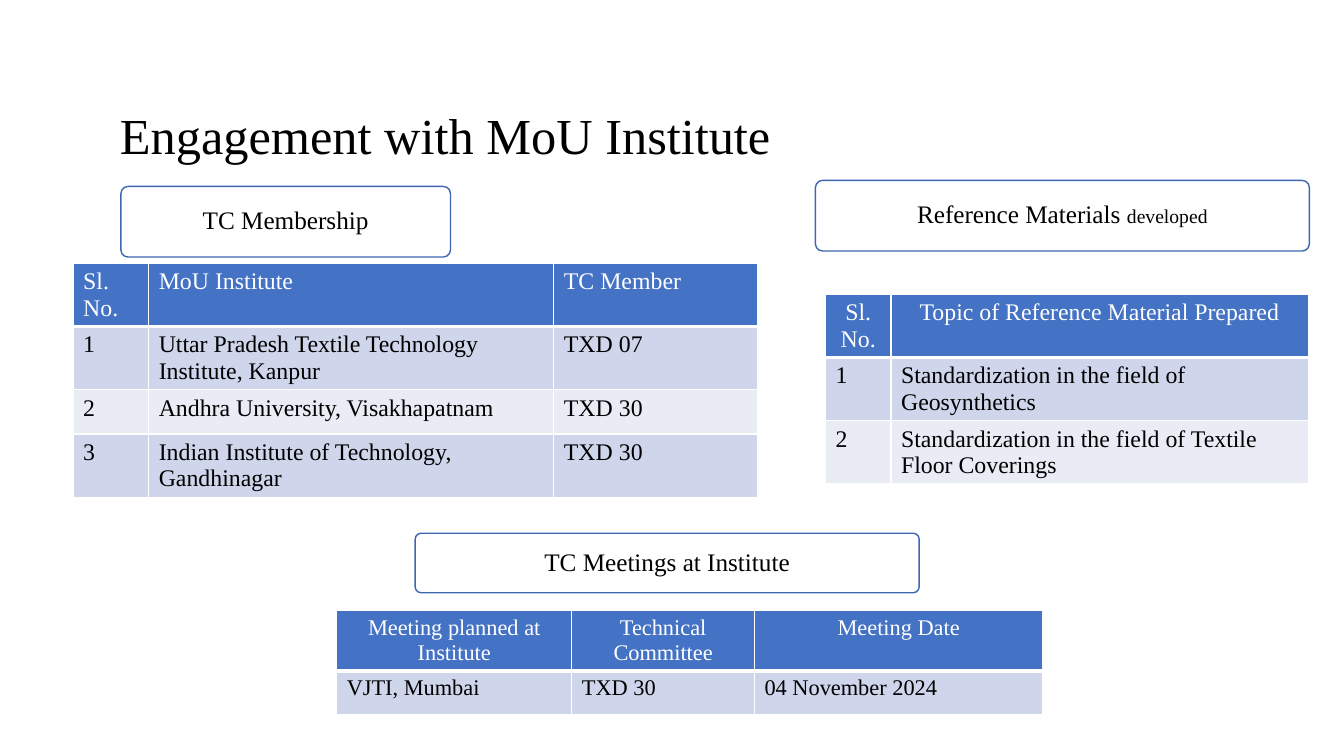
from lxml import etree
from pptx import Presentation
from pptx import util as u
from pptx.dml.color import RGBColor
from pptx.enum import shapes, text
from pptx.oxml.ns import qn

COLORS = {
    "black": "000000",
    "white": "FFFFFF",
    "outline": "3E67B2",
    "header": "4472C4",
    "odd": "CFD5EA",
    "even": "E9EBF5",
}
CENTER, LEFT = text.PP_ALIGN.CENTER, text.PP_ALIGN.LEFT


def rgb(name):
    return RGBColor.from_string(COLORS[name])


def add_text(p, content, size=18, color="black", align=LEFT, font="Times New Roman", spacing=None):
    p.alignment = align
    if spacing:
        p.line_spacing = spacing
    r = p.add_run()
    r.text = content
    r.font.name = font
    r.font.size = u.Pt(size)
    r.font.bold = False
    r.font.color.rgb = rgb(color)


class SlideBuilder:
    def __init__(self, s):
        self.s = s

    def title(self, content, x, y, w, h):
        sp = self.s.shapes.title
        sp.left, sp.top, sp.width, sp.height = map(u.Pt, (x, y, w, h))
        tf = sp.text_frame
        tf.auto_size = text.MSO_AUTO_SIZE.NONE
        tf.vertical_anchor = text.MSO_ANCHOR.MIDDLE
        add_text(tf.paragraphs[0], content, size=36, spacing=0.9)

    def heading(self, parts, x, y, w, h):
        sp = self.s.shapes.add_shape(
            shapes.MSO_SHAPE.ROUNDED_RECTANGLE, *map(u.Pt, (x, y, w, h)))
        sp.adjustments[0] = 0.1
        sp.shadow.inherit = False
        sp.fill.solid()
        sp.fill.fore_color.rgb = rgb("white")
        sp.line.color.rgb = rgb("outline")
        sp.line.width = u.Pt(1)
        tf = sp.text_frame
        tf.word_wrap = True
        tf.vertical_anchor = text.MSO_ANCHOR.MIDDLE
        for content, size in parts:
            add_text(tf.paragraphs[0], content, size=size, align=CENTER, spacing=0.9)

    def borders(self, cell, bottom):
        tcPr = cell._tc.get_or_add_tcPr()
        for side, width in (("L", 1), ("R", 1), ("T", 1), ("B", bottom)):
            ln = etree.SubElement(tcPr, qn(f"a:ln{side}"), w=str(u.Pt(width)))
            fill = etree.SubElement(ln, qn("a:solidFill"))
            etree.SubElement(fill, qn("a:srgbClr"), val=COLORS["white"])

    def table(self, rows, x, y, widths, heights, size=17, header_align=LEFT):
        tbl = self.s.shapes.add_table(
            len(rows), len(widths),
            *map(u.Pt, (x, y, sum(widths), sum(heights)))).table
        for col, width in zip(tbl.columns, widths):
            col.width = u.Pt(width)
        for i, (row, height) in enumerate(zip(rows, heights)):
            tbl.rows[i].height = u.Pt(height)
            is_header = i == 0
            fill = "header" if is_header else ("odd" if i % 2 else "even")
            for j, content in enumerate(row):
                cell = tbl.cell(i, j)
                self.borders(cell, bottom=3 if is_header else 1)
                cell.fill.solid()
                cell.fill.fore_color.rgb = rgb(fill)
                add_text(cell.text_frame.paragraphs[0], content, size=size,
                         color="white" if is_header else "black",
                         align=header_align if is_header else LEFT)


def main():
    prs = Presentation()
    prs.slide_width, prs.slide_height = u.Pt(960), u.Pt(540)
    b = SlideBuilder(prs.slides.add_slide(prs.slide_layouts[5]))

    b.title("Engagement with MoU Institute", 78.5, 68.4, 828, 60.5)

    # Committee membership
    b.heading([("TC Membership", 18)], 86.4, 133.2, 235.4, 50.4)
    b.table([
        ("Sl. No.", "MoU Institute", "TC Member"),
        ("1", "Uttar Pradesh Textile Technology Institute, Kanpur", "TXD 07"),
        ("2", "Andhra University, Visakhapatnam", "TXD 30"),
        ("3", "Indian Institute of Technology, Gandhinagar", "TXD 30"),
    ], 52.2, 188, [54, 289.4, 145.4], [45, 45, 31.7, 45])

    # Committee meetings
    b.heading([("TC Meetings at Institute", 18)], 296.6, 380.9, 360, 42.5)
    b.table([
        ("Meeting planned at Institute", "Technical Committee", "Meeting Date"),
        ("VJTI, Mumbai", "TXD 30", "04 November 2024"),
    ], 240.5, 436.3, [168, 130.5, 206], [42.5, 31.7], size=16, header_align=CENTER)

    # Reference materials
    b.heading([("Reference Materials ", 18), ("developed", 14)], 582.5, 128.9, 352.8, 50.4)
    b.table([
        ("Sl. No.", "Topic of Reference Material Prepared"),
        ("1", "Standardization in the field of Geosynthetics"),
        ("2", "Standardization in the field of Textile Floor Coverings"),
    ], 589.6, 210.2, [46.8, 298], [45, 45, 45], header_align=CENTER)

    prs.save("out.pptx")


if __name__ == "__main__":
    main()
